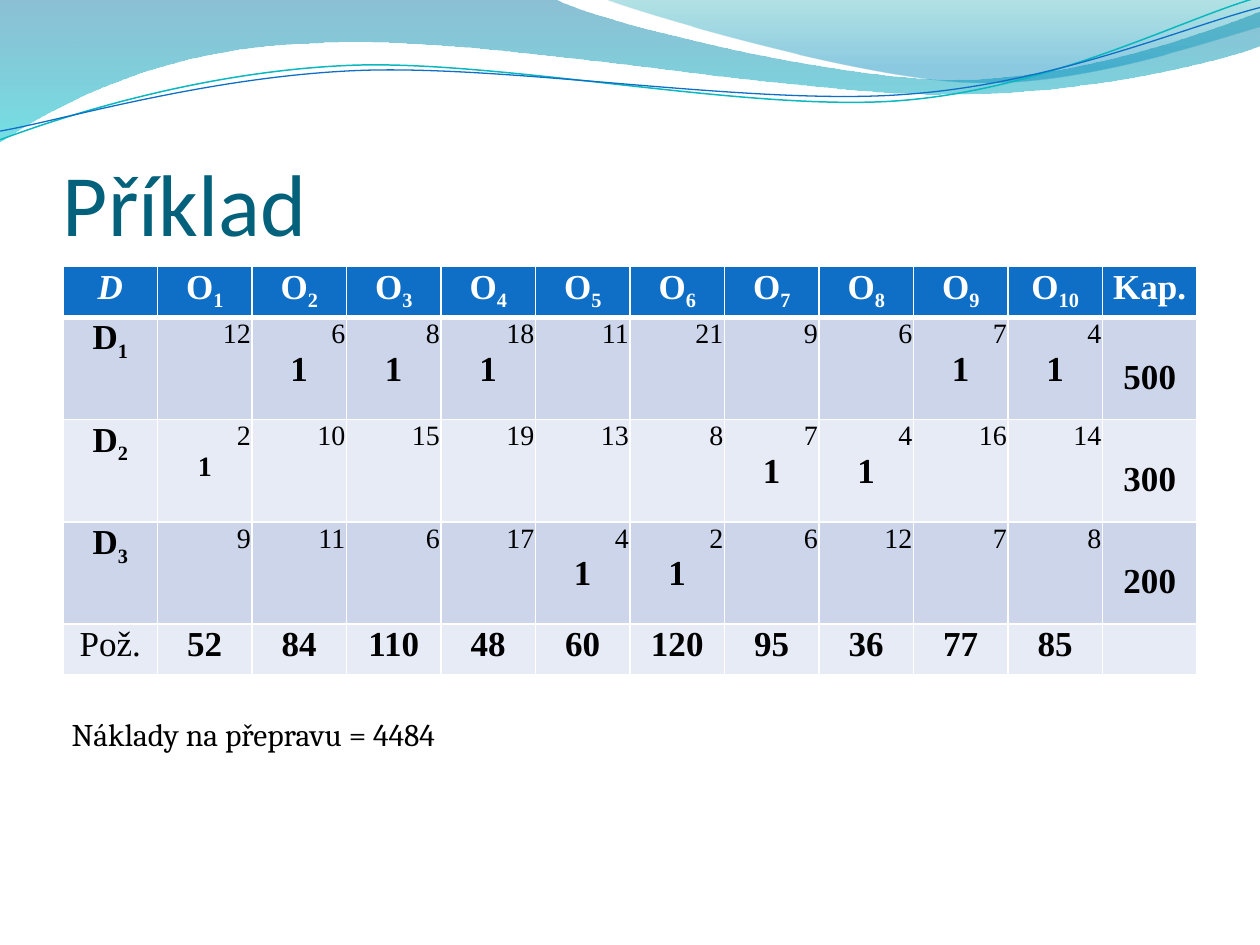
from lxml.etree import SubElement
from pptx import Presentation
from pptx.dml.color import RGBColor
from pptx.enum.text import MSO_ANCHOR, PP_ALIGN
from pptx.oxml.ns import qn
from pptx.util import Pt

WHITE = RGBColor(0xFF, 0xFF, 0xFF)
BLACK = RGBColor(0x00, 0x00, 0x00)
TITLE_TEAL = RGBColor(0x04, 0x61, 0x7B)
HEADER_BLUE = RGBColor(0x0F, 0x6F, 0xC6)
BAND_DARK = RGBColor(0xCC, 0xD5, 0xEA)
BAND_LIGHT = RGBColor(0xE7, 0xEB, 0xF5)
LINE_TEAL = RGBColor(0x0A, 0xB8, 0xBF)
DEEP_BLUE = RGBColor(0x00, 0x74, 0xA1)
CYAN = RGBColor(0x00, 0xC6, 0xCF)
SEA_GREEN = RGBColor(0x00, 0xA1, 0xA9)
SKY_BLUE = RGBColor(0x00, 0x8B, 0xBF)

SERIF = "Times New Roman"
TITLE = {"name": "Calibri", "size": Pt(50)}
NOTE = {"name": "Cambria", "size": Pt(18)}
COST = {"name": SERIF, "size": Pt(16), "bold": False}
STRONG = {"name": SERIF, "size": Pt(20), "bold": True}
PLAIN = STRONG | {"bold": False}
CELL_INSETS = {"margin_left": Pt(0.72), "margin_right": Pt(0.72),
               "margin_top": Pt(0.72), "margin_bottom": Pt(0)}

# Wave outlines in points: pairs are corners, sixes are Bézier segments
WIDE_WAVE = [(-0.7, 0), (316.8, -0.7), (342.7, 13, 478, 45.4, 545.8, 45.4),
             (614.2, 45.4, 689.8, 18.7, 720, 6.5), (720.7, 25.9),
             (707.8, 31.7, 626.4, 54.7, 537.1, 54),
             (447.8, 54, 275, 20.2, 185, 24.5),
             (92.9, 25.9, 33.1, 59.8, -0.7, 81.4)]
RIGHT_WAVE = [(344.9, -0.7), (366.5, 7.9, 491, 44.6, 553.7, 46.8),
              (616.3, 49.7, 691.9, 23, 720, 15.1), (720, 0)]
TEAL_CURVE = [(0, 79.9), (34.6, 67, 113.8, 41, 199.4, 37.4),
              (284.4, 33.8, 427, 64.1, 513.4, 57.6),
              (599.8, 51.1, 675.4, 10.8, 718.6, -1.4)]
BLUE_CURVE = [(0, 74.9), (33.8, 69.1, 118.1, 43.9, 203.8, 40.3),
              (290.2, 36.7, 429.8, 60.5, 516.2, 54),
              (601.9, 48.2, 677.5, 15.1, 720, 4.3)]
UNITS_PER_POINT = 100

# Transport problem: costs, the columns each depot serves, capacities, demands
COSTS = [[12, 6, 8, 18, 11, 21, 9, 6, 7, 4],
         [2, 10, 15, 19, 13, 8, 7, 4, 16, 14],
         [9, 11, 6, 17, 4, 2, 6, 12, 7, 8]]
SERVED = [{2, 3, 4, 9, 10}, {1, 7, 8}, {5, 6}]
CAPACITIES = [500, 300, 200]
DEMANDS = [52, 84, 110, 48, 60, 120, 95, 36, 77, 85]


def apply_format(target, values):
    for attribute, value in values.items():
        setattr(target, attribute, value)


def write(paragraph, text, font_format, color=BLACK, subscript=False):
    run = paragraph.add_run()
    run.text = str(text)
    apply_format(run.font, font_format)
    run.font.color.rgb = color
    if subscript:
        run._r.get_or_add_rPr().set("baseline", "-25000")


def bend(line_segment, controls, origin):
    """Turn a straight segment into a Bézier one with two control points."""
    line_segment.tag = qn("a:cubicBezTo")
    for position, (x, y) in enumerate(controls):
        control = line_segment.makeelement(
            qn("a:pt"), {"x": str(x - origin[0]), "y": str(y - origin[1])})
        line_segment.insert(position, control)


def add_outline(slide, outline, close):
    outline = [[round(value * UNITS_PER_POINT) for value in step] for step in outline]
    corners = [step[-2:] for step in outline]
    origin = [min(values) for values in zip(*corners)]
    builder = slide.shapes.build_freeform(*corners[0], scale=Pt(1) / UNITS_PER_POINT)
    builder.add_line_segments(corners[1:], close=close)
    shape = builder.convert_to_shape()
    shape.shadow.inherit = False
    segments = list(shape._element.iter(qn("a:lnTo")))
    for segment, step in zip(segments, outline[1:]):
        if len(step) == 6:
            bend(segment, [step[:2], step[2:4]], origin)
    return shape


def add_wave(slide, outline, stops):
    wave = add_outline(slide, outline, close=True)
    wave.line.fill.background()
    wave.fill.gradient()
    wave.fill.gradient_angle = 270
    for stop, (position, color, _) in zip(wave.fill.gradient_stops, stops):
        stop.position = position
        stop.color.rgb = color
    for tint, (_, _, opacity) in zip(wave._element.spPr.iter(qn("a:srgbClr")), stops):
        SubElement(tint, qn("a:alpha"), val=str(opacity * 1000))


def add_curve(slide, outline, color, width):
    curve = add_outline(slide, outline, close=False)
    curve.fill.background()
    curve.line.color.rgb = color
    curve.line.width = width


def add_text(slide, box, text, font_format, color, frame_format):
    frame = slide.shapes.add_textbox(*map(Pt, box)).text_frame
    apply_format(frame, {"word_wrap": True} | frame_format)
    write(frame.paragraphs[0], text, font_format, color)


def set_borders(cell, widths):
    properties = cell._tc.get_or_add_tcPr()
    for position, (side, width) in enumerate(widths.items()):
        border = properties.makeelement(qn(f"a:{side}"), {"w": str(width)})
        fill = SubElement(border, qn("a:solidFill"))
        SubElement(fill, qn("a:srgbClr"), val=str(WHITE))
        properties.insert(position, border)


def fill_label(cell, text, font_format, color=BLACK, index=None):
    label = cell.text_frame.paragraphs[0]
    label.alignment = PP_ALIGN.CENTER
    write(label, text, font_format, color)
    if index:
        write(label, index, font_format, color, subscript=True)


def fill_cost(cell, cost, served, mark_format):
    corner = cell.text_frame.paragraphs[0]
    corner.alignment = PP_ALIGN.RIGHT
    write(corner, cost, COST)
    if served:
        mark = cell.text_frame.add_paragraph()
        mark.alignment = PP_ALIGN.CENTER
        write(mark, 1, mark_format)


def add_transport_table(slide):
    table = slide.shapes.add_table(5, 12, Pt(36), Pt(152.3), Pt(648), Pt(233.4)).table
    for column in table.columns:
        column.width = Pt(54)
    bands = [HEADER_BLUE, BAND_DARK, BAND_LIGHT, BAND_DARK, BAND_LIGHT]
    tops = [Pt(1), Pt(3), Pt(1), Pt(1), Pt(1)]
    bottoms = tops[1:] + [Pt(1)]
    heights = [29.1, 58.4, 58.4, 58.4, 29.1]
    for row, height, band, top, bottom in zip(table.rows, heights, bands, tops, bottoms):
        row.height = Pt(height)
        for cell in row.cells:
            apply_format(cell, CELL_INSETS)
            cell.fill.solid()
            cell.fill.fore_color.rgb = band
            set_borders(cell, {"lnL": Pt(1), "lnR": Pt(1), "lnT": top, "lnB": bottom})

    # Header and demand rows
    fill_label(table.cell(0, 0), "D", STRONG | {"italic": True}, WHITE)
    fill_label(table.cell(0, 11), "Kap.", STRONG, WHITE)
    fill_label(table.cell(4, 0), "Pož.", PLAIN)
    for customer, demand in enumerate(DEMANDS, 1):
        fill_label(table.cell(0, customer), "O", STRONG, WHITE, customer)
        fill_label(table.cell(4, customer), demand, STRONG)

    # Depot rows
    for depot, (costs, served, capacity) in enumerate(zip(COSTS, SERVED, CAPACITIES), 1):
        fill_label(table.cell(depot, 0), "D", STRONG, index=depot)
        for customer, cost in enumerate(costs, 1):
            small = (depot, customer) == (2, 1)
            mark_format = STRONG | {"size": Pt(16)} if small else STRONG
            fill_cost(table.cell(depot, customer), cost, customer in served, mark_format)
        capacity_cell = table.cell(depot, 11)
        capacity_cell.margin_top = Pt(23.3)
        fill_label(capacity_cell, capacity, STRONG)


def main():
    presentation = Presentation()
    apply_format(presentation, {"slide_width": Pt(720), "slide_height": Pt(540)})
    slide = presentation.slides.add_slide(presentation.slide_layouts[6])

    # Wave decoration
    add_wave(slide, WIDE_WAVE, [(0, DEEP_BLUE, 45), (1, CYAN, 55)])
    add_wave(slide, RIGHT_WAVE, [(0, SEA_GREEN, 30), (0.8, SKY_BLUE, 45)])
    add_curve(slide, TEAL_CURVE, LINE_TEAL, Pt(0.85))
    add_curve(slide, BLUE_CURVE, HEADER_BLUE, Pt(0.75))

    # Title, table and total cost
    add_text(slide, (36, 55.4, 648, 90), "Příklad", TITLE, TITLE_TEAL,
             {"vertical_anchor": MSO_ANCHOR.BOTTOM, "margin_left": Pt(0),
              "margin_top": Pt(3.6), "margin_right": Pt(0), "margin_bottom": Pt(0)})
    add_transport_table(slide)
    add_text(slide, (33.8, 405, 320.4, 28.8), "Náklady na přepravu = 4484",
             NOTE, BLACK, {})

    presentation.save("out.pptx")


if __name__ == "__main__":
    main()
